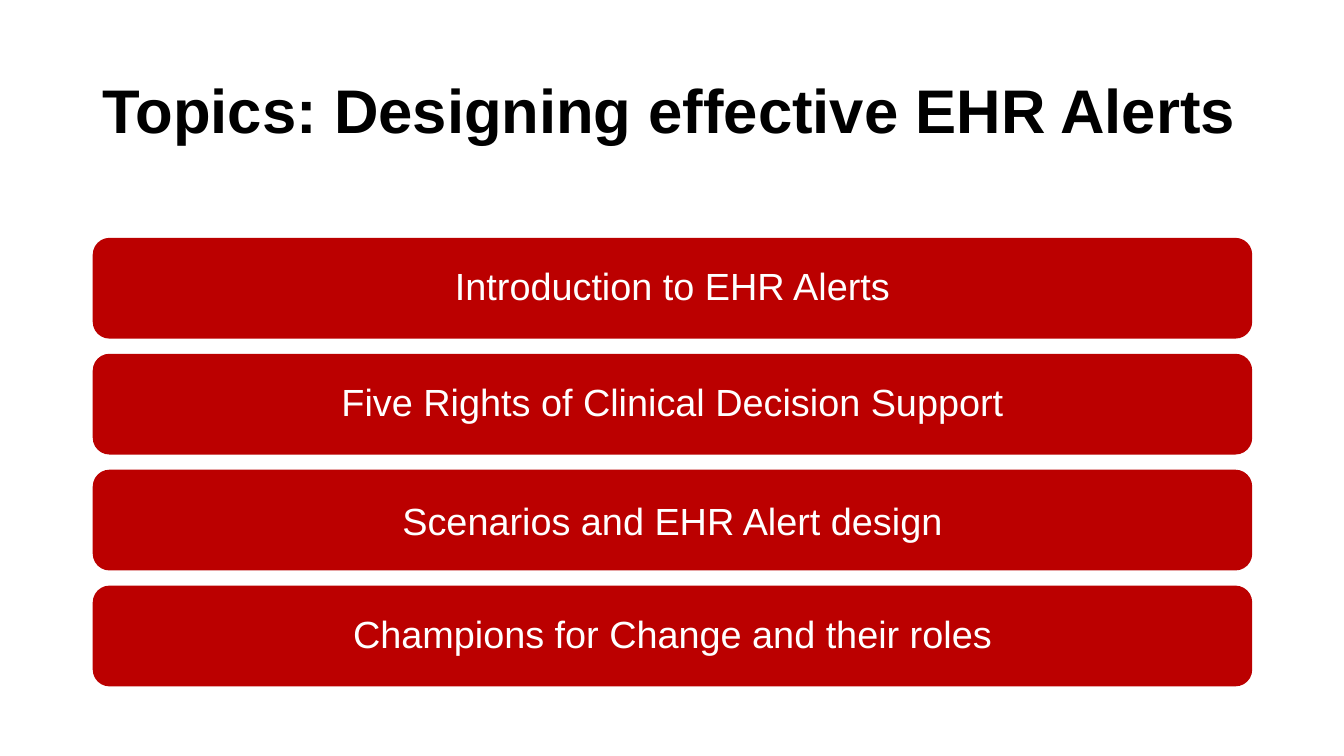
from pptx import Presentation
from pptx.dml.color import RGBColor
from pptx.enum.shapes import MSO_SHAPE
from pptx.enum.text import MSO_ANCHOR, PP_ALIGN
from pptx.util import Inches, Pt

COLORS = {"title": "000000", "bar": "BB0000", "bar_text": "FFFFFF"}
FONT = "Arial"
SLIDE_WIDTH, SLIDE_HEIGHT = 13.33, 7.5
MARGIN = 0.92
CONTENT_WIDTH = 11.5
FIRST_ROW_TOP = 2.36
ROW_HEIGHT = 1
ROW_GAP = 0.15

TITLE = "Topics: Designing effective EHR Alerts"
TOPICS = [
    ("Introduction to EHR Alerts", 0.9, 10),
    ("Five Rights of Clinical Decision Support", 0.9, 10),
    ("Scenarios and EHR Alert design", 1.0, 0),
    ("Champions for Change and their roles", 0.9, 10),
]


def write_text(shape, text, size, color, alignment, bold=False, line_spacing=0.9, space_before=0):
    frame = shape.text_frame
    frame.word_wrap = True
    frame.vertical_anchor = MSO_ANCHOR.MIDDLE
    paragraph = frame.paragraphs[0]
    paragraph.alignment = alignment
    paragraph.line_spacing = line_spacing
    paragraph.space_before = Pt(space_before)
    run = paragraph.add_run()
    run.text = text
    run.font.name = FONT
    run.font.size = Pt(size)
    run.font.bold = bold
    run.font.color.rgb = RGBColor.from_string(COLORS[color])


def add_title(slide):
    shape = slide.shapes.add_textbox(
        Inches(MARGIN), Inches(0.4), Inches(CONTENT_WIDTH), Inches(1.45)
    )
    write_text(shape, TITLE, 44, "title", PP_ALIGN.LEFT, bold=True)


def add_topic_bar(slide, row, text, line_spacing, space_before):
    top = FIRST_ROW_TOP + row * (ROW_HEIGHT + ROW_GAP)
    shape = slide.shapes.add_shape(
        MSO_SHAPE.ROUNDED_RECTANGLE,
        Inches(MARGIN), Inches(top), Inches(CONTENT_WIDTH), Inches(ROW_HEIGHT),
    )
    shape.shadow.inherit = False
    shape.fill.solid()
    shape.fill.fore_color.rgb = RGBColor.from_string(COLORS["bar"])
    shape.line.fill.background()
    write_text(
        shape, text, 27, "bar_text", PP_ALIGN.CENTER,
        line_spacing=line_spacing, space_before=space_before,
    )


def main():
    presentation = Presentation()
    presentation.slide_width = Inches(SLIDE_WIDTH)
    presentation.slide_height = Inches(SLIDE_HEIGHT)
    slide = presentation.slides.add_slide(presentation.slide_layouts[6])
    add_title(slide)
    for row, (text, line_spacing, space_before) in enumerate(TOPICS):
        add_topic_bar(slide, row, text, line_spacing, space_before)
    presentation.save("out.pptx")


if __name__ == "__main__":
    main()
